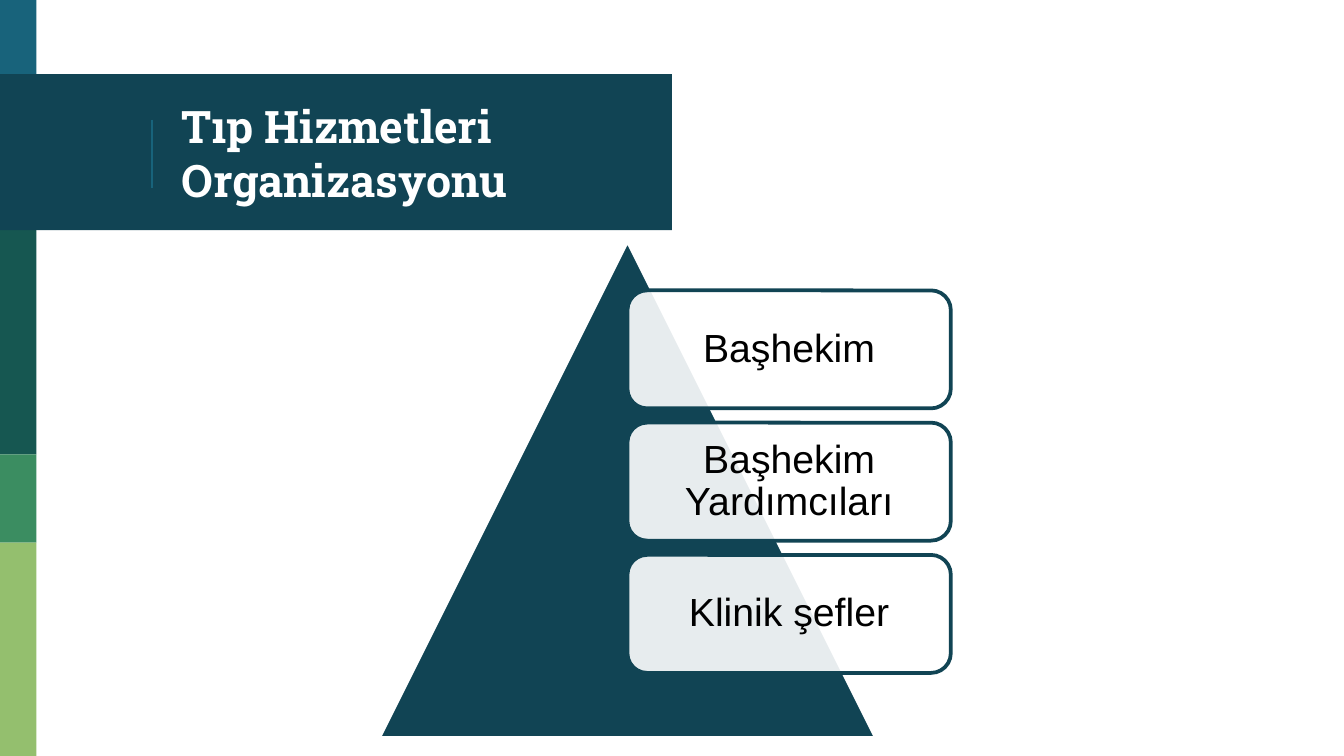
from lxml import etree
from pptx import Presentation
from pptx.dml.color import RGBColor
from pptx.enum.shapes import MSO_CONNECTOR, MSO_SHAPE
from pptx.enum.text import MSO_ANCHOR, PP_ALIGN
from pptx.oxml.ns import qn
from pptx.util import Cm, Pt

RECT = MSO_SHAPE.RECTANGLE
ROUND = MSO_SHAPE.ROUNDED_RECTANGLE
PEAK = MSO_SHAPE.ISOSCELES_TRIANGLE
LINE = MSO_CONNECTOR.STRAIGHT
MIDDLE = MSO_ANCHOR.MIDDLE
LEFT, CENTER = PP_ALIGN.LEFT, PP_ALIGN.CENTER

NAVY, BLUE, WHITE, BLACK = "114454", "18637B", "FFFFFF", "000000"
WIDE, HIGH = 25.4, 14.29
STRIPS = [(0, 1.4, BLUE), (4.32, 8.59, "165751"),
          (8.59, 10.26, "3B8D61"), (10.26, HIGH, "94BF6E")]
ROLES = ["Başhekim", "Başhekim Yardımcıları", "Klinik şefler"]


def color(code):
    """Turn a hex string into a colour."""
    return RGBColor.from_string(code)


def block(slide, kind, box, fill, edge=None):
    """Add a filled preset shape, with a 2 pt edge if one is given."""
    shape = slide.shapes.add_shape(kind, *map(Cm, box))
    shape.shadow.inherit = False
    shape.fill.solid()
    shape.fill.fore_color.rgb = color(fill)
    if edge:
        shape.line.color.rgb = color(edge)
        shape.line.width = Pt(2)
    else:
        shape.line.fill.background()
    return shape


def write(shape, text, font, size, ink, align, inset, bold=False):
    """Fill a shape with one paragraph, centred in height."""
    frame = shape.text_frame
    frame.word_wrap = True
    frame.vertical_anchor = MIDDLE
    frame.margin_left = frame.margin_right = Cm(inset)
    frame.margin_top = frame.margin_bottom = Cm(inset)
    para = frame.paragraphs[0]
    para.text = text
    para.alignment = align
    para.font.name, para.font.size = font, Pt(size)
    para.font.bold = bold
    para.font.color.rgb = color(ink)
    return para


def fade(shape, share):
    """Set the opacity of a solid fill in percent."""
    tone = shape.fill._xPr.find(qn("a:solidFill"))[0]
    etree.SubElement(tone, qn("a:alpha")).set("val", str(share * 1000))


def side(slide, x, y, w):
    """Draw the coloured strips down the edge."""
    for top, end, fill in STRIPS:
        block(slide, RECT, (x, y + top, w, end - top), fill)


def banner(slide, x, y, w, h, title):
    """Draw the title band with its thin rule."""
    block(slide, RECT, (x, y, w, h), NAVY)
    rule = slide.shapes.add_connector(
        LINE, *map(Cm, (x + 2.87, y + 0.86, x + 2.87, y + 2.16)))
    rule.line.color.rgb = color(BLUE)
    rule.line.width = Pt(0.75)
    etree.SubElement(rule._element.spPr, qn("a:effectLst"))
    label = slide.shapes.add_textbox(
        *map(Cm, (x + 3.18, y + 0.07, 8.92, h - 0.11)))
    write(label, title, "Roboto Slab", 24, WHITE, LEFT, 0.25, True)


def pyramid(slide, x, y, size, roles):
    """Draw the triangle and the role cards on its right half."""
    block(slide, PEAK, (x, y, size, size), NAVY, WHITE)
    tall, step = 2.23, 2.5
    for i, role in enumerate(roles):
        box = (x + size / 2, y + size / 10 + i * step, size * 0.65, tall)
        card = block(slide, ROUND, box, WHITE, NAVY)
        fade(card, 90)
        para = write(card, role, "Arial", 21, BLACK, CENTER, 0.23)
        para.line_spacing = 0.9


def main():
    """Build and save the slide."""
    deck = Presentation()
    deck.slide_width, deck.slide_height = Cm(WIDE), Cm(HIGH)
    slide = deck.slides.add_slide(deck.slide_layouts[6])
    side(slide, 0, 0, 0.69)
    banner(slide, 0, 1.4, WIDE / 2, 2.95, "Tıp Hizmetleri Organizasyonu")
    pyramid(slide, 7.16, 4.55, 9.4, ROLES)
    deck.save("out.pptx")


if __name__ == "__main__":
    main()
